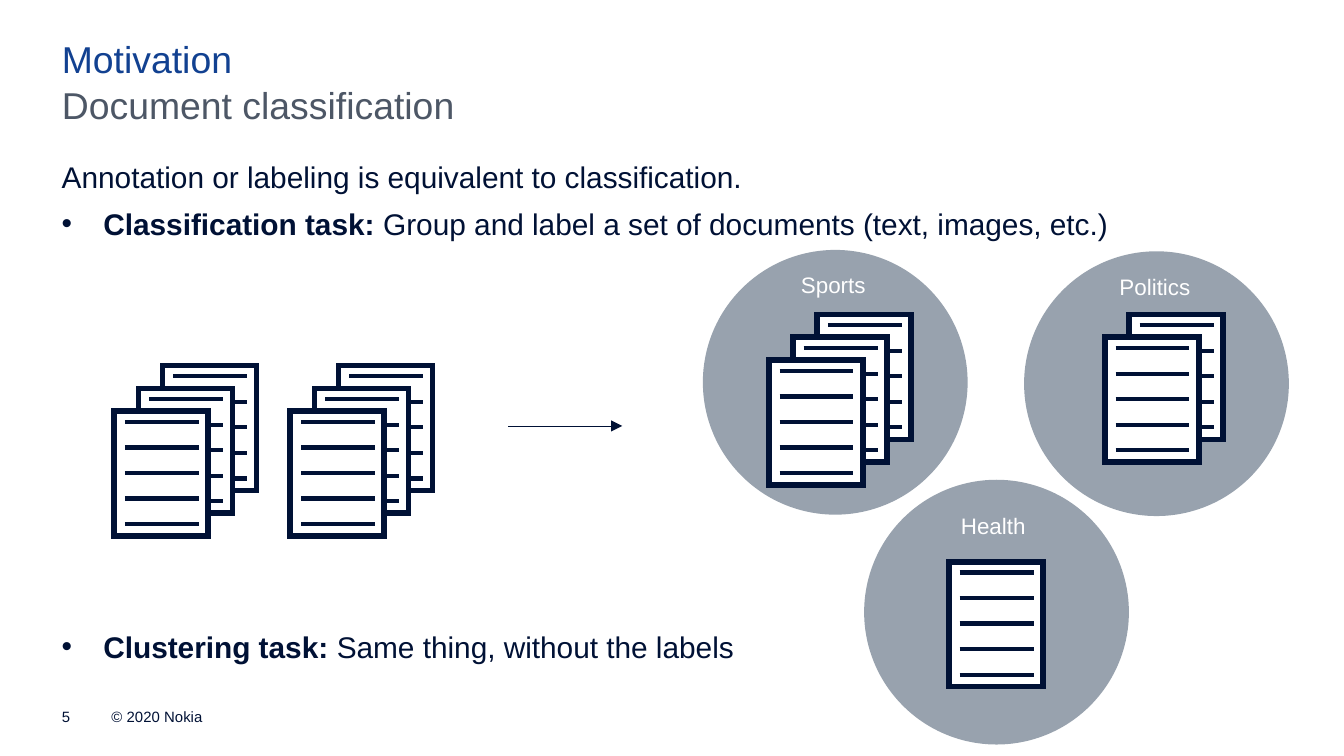
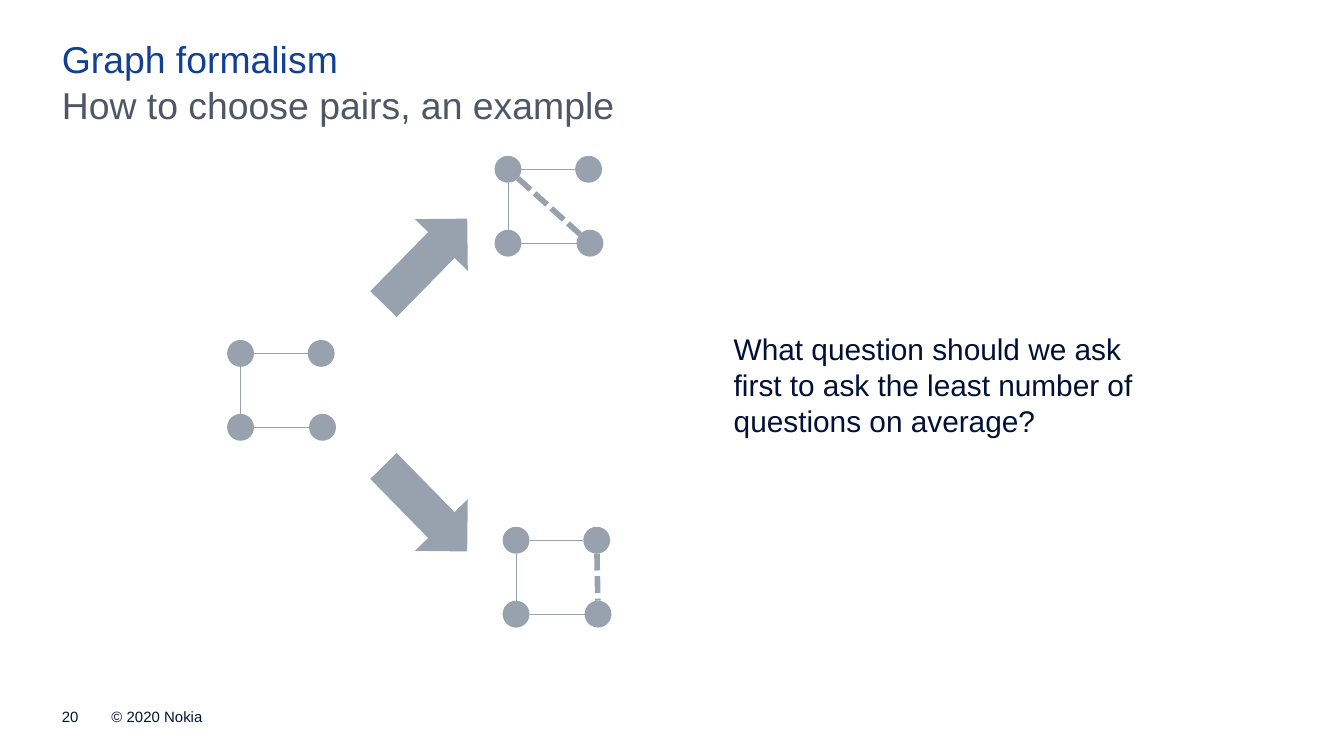
from dataclasses import dataclass
from math import hypot

from lxml.etree import SubElement
from pptx import Presentation
from pptx.dml.color import RGBColor
from pptx.enum.dml import MSO_LINE
from pptx.enum.shapes import MSO_CONNECTOR, MSO_SHAPE
from pptx.enum.text import MSO_ANCHOR
from pptx.oxml.ns import qn
from pptx.util import Inches, Pt


@dataclass(frozen=True)
class Theme:
    """Colours and type sizes shared by all slides."""

    ink: RGBColor = RGBColor(0x00, 0x11, 0x35)
    blue: RGBColor = RGBColor(0x12, 0x41, 0x91)
    slate: RGBColor = RGBColor(0x4D, 0x57, 0x66)
    grey: RGBColor = RGBColor(0x98, 0xA2, 0xAE)
    white: RGBColor = RGBColor(0xFF, 0xFF, 0xFF)
    font: str = "Arial"
    title_size: int = 20
    body_size: int = 16
    label_size: int = 12
    footer_size: int = 8


THEME = Theme()


def add_box(page, left, top, width, height, inset=0, anchor=MSO_ANCHOR.TOP):
    """Add an empty wrapping text box and return its text frame."""
    box = page.shapes.add_textbox(Inches(left), Inches(top), Inches(width), Inches(height))
    frame = box.text_frame
    frame.word_wrap = True
    frame.vertical_anchor = anchor
    frame.margin_left = frame.margin_right = Inches(inset)
    frame.margin_top = frame.margin_bottom = Inches(inset)
    return frame


def add_span(para, text, size, color, bold=False):
    """Add one styled run to a paragraph."""
    span = para.add_run()
    span.text = text
    span.font.name = THEME.font
    span.font.size = Pt(size)
    span.font.bold = bold
    span.font.color.rgb = color


def add_bullet(para, indent=0.31):
    """Give a paragraph a hanging round bullet."""
    properties = para._p.get_or_add_pPr()
    properties.set("marL", str(Inches(indent)))
    properties.set("indent", str(-Inches(indent)))
    SubElement(properties, qn("a:buFont")).set("typeface", THEME.font)
    SubElement(properties, qn("a:buChar")).set("char", "•")


def add_solid(shapes, kind, left, top, width, height, color):
    """Add a flat preset shape without an outline."""
    shape = shapes.add_shape(kind, Inches(left), Inches(top), Inches(width), Inches(height))
    shape.shadow.inherit = False
    shape.fill.solid()
    shape.fill.fore_color.rgb = color
    shape.line.fill.background()
    return shape


def add_line(shapes, start, end, color, weight):
    """Add a flat straight connector between two points."""
    points = [Inches(value) for value in (*start, *end)]
    line = shapes.add_connector(MSO_CONNECTOR.STRAIGHT, *points)
    line.line.color.rgb = color
    line.line.width = Pt(weight)
    SubElement(line._element.spPr, qn("a:effectLst"))
    return line


def add_frame(deck, title, subtitle, number):
    """Add a slide with its two title lines and footer."""
    page = deck.slides.add_slide(deck.slide_layouts[6])
    for text, top, color in ((title, 0.31, THEME.blue), (subtitle, 0.65, THEME.slate)):
        para = add_box(page, 0.46, top, 9.09, 0.34).paragraphs[0]
        para.line_spacing = 0.9
        add_span(para, text, THEME.title_size, color)
    for text, left, width in ((number, 0.46, 0.28), ("© 2020 Nokia", 0.83, 1.97)):
        frame = add_box(page, left, 5.27, width, 0.13, anchor=MSO_ANCHOR.BOTTOM)
        add_span(frame.paragraphs[0], text, THEME.footer_size, THEME.ink)
    return page


def add_document(page, left, top):
    """Draw one ruled sheet as a group."""
    shapes = page.shapes.add_group_shape().shapes
    sheet = add_solid(shapes, MSO_SHAPE.RECTANGLE, left, top, 0.7, 0.93, THEME.white)
    sheet.line.color.rgb = THEME.ink
    sheet.line.width = Pt(3)
    SubElement(sheet.line._get_or_add_ln(), qn("a:miter")).set("lim", "800000")
    for row in range(5):
        height = top + 0.08 + 0.19 * row
        add_line(shapes, (left + 0.08, height), (left + 0.63, height), THEME.ink, 2.25)


def add_stack(page, left, top, count):
    """Draw overlapping sheets from the back one at left, top."""
    for sheet in range(count):
        add_document(page, left - 0.18 * sheet, top + 0.17 * sheet)


def add_topic(page, left, top, name, label_offset, stack_offset, count):
    """Draw a labelled circle holding a stack of documents."""
    add_solid(page.shapes, MSO_SHAPE.OVAL, left, top, 1.97, 1.97, THEME.grey)
    add_stack(page, left + stack_offset[0], top + stack_offset[1], count)
    frame = add_box(page, left + label_offset[0], top + label_offset[1], 1, 1, inset=0.08)
    add_span(frame.paragraphs[0], name, THEME.label_size, THEME.white)


def add_tasks(page, left, top, width, height):
    """Write the introduction and the two task bullets."""
    frame = add_box(page, left, top, width, height)
    intro = frame.paragraphs[0]
    intro.space_after = Pt(6)
    add_span(intro, "Annotation or labeling is equivalent to classification.",
             THEME.body_size, THEME.ink)
    tasks = (
        ("Classification task: ", "Group and label a set of documents (text, images, etc.)", 0),
        ("Clustering task: ", "Same thing, without the labels", 201.5),
    )
    for name, text, gap in tasks:
        para = frame.add_paragraph()
        add_bullet(para)
        para.space_before = Pt(gap)
        para.space_after = Pt(6)
        add_span(para, name, THEME.body_size, THEME.ink, bold=True)
        add_span(para, text, THEME.body_size, THEME.ink)


def add_graph(page, left, top, question=None):
    """Draw four nodes, their known edges and an optional dashed edge."""
    size = 0.2
    radius = size / 2
    corners = ((0, 0), (0.6, 0), (0, 0.55), (0.61, 0.55))
    nodes = [(left + x, top + y) for x, y in corners]
    for x, y in nodes:
        add_solid(page.shapes, MSO_SHAPE.OVAL, x, y, size, size, THEME.grey)

    def join(first, second, weight):
        """Join the rims of two nodes."""
        (x1, y1), (x2, y2) = nodes[first], nodes[second]
        distance = hypot(x2 - x1, y2 - y1)
        dx, dy = radius * (x2 - x1) / distance, radius * (y2 - y1) / distance
        start = (x1 + radius + dx, y1 + radius + dy)
        end = (x2 + radius - dx, y2 + radius - dy)
        return add_line(page.shapes, start, end, THEME.grey, weight)

    for first, second in ((0, 1), (2, 3), (0, 2)):
        join(first, second, 0.25)
    if question:
        join(*question, 3).line.dash_style = MSO_LINE.SQUARE_DOT


def build_motivation(deck):
    """Build the document classification slide."""
    page = add_frame(deck, "Motivation", "Document classification", "5")
    add_tasks(page, 0.46, 1.18, 8.63, 4.02)
    for left in (1.21, 2.52):
        add_stack(page, left, 2.72, 3)
    arrow = add_line(page.shapes, (3.78, 3.17), (4.63, 3.17), THEME.ink, 0.25)
    SubElement(arrow.line._get_or_add_ln(), qn("a:tailEnd")).set("type", "triangle")
    add_topic(page, 6.43, 3.57, "Health", (0.64, 0.16), (0.63, 0.61), 1)
    add_topic(page, 7.62, 1.87, "Politics", (0.63, 0.08), (0.78, 0.47), 2)
    add_topic(page, 5.23, 1.86, "Sports", (0.65, 0.08), (0.85, 0.48), 3)


def build_graph_example(deck):
    """Build the slide that compares two candidate pairs."""
    page = add_frame(deck, "Graph formalism", "How to choose pairs, an example", "20")
    add_graph(page, 1.69, 2.53)
    arrows = ((MSO_SHAPE.UP_ARROW, 1.5, 44.4), (MSO_SHAPE.DOWN_ARROW, 3.34, 315.6))
    for kind, top, angle in arrows:
        add_solid(page.shapes, kind, 2.89, top, 0.55, 0.89, THEME.grey).rotation = angle
    add_graph(page, 3.68, 1.16, question=(0, 3))
    add_graph(page, 3.74, 3.92, question=(1, 3))
    para = add_box(page, 5.46, 2.46, 3.13, 1.77).paragraphs[0]
    para.space_after = Pt(6)
    add_span(para, "What question should we ask first to ask the least number of "
             "questions on average?", THEME.body_size, THEME.ink)


def main():
    """Build and save the deck in the 16:9 format."""
    deck = Presentation()
    deck.slide_width = Inches(10)
    deck.slide_height = deck.slide_width * 9 // 16
    build_motivation(deck)
    build_graph_example(deck)
    deck.save("out.pptx")


if __name__ == "__main__":
    main()
